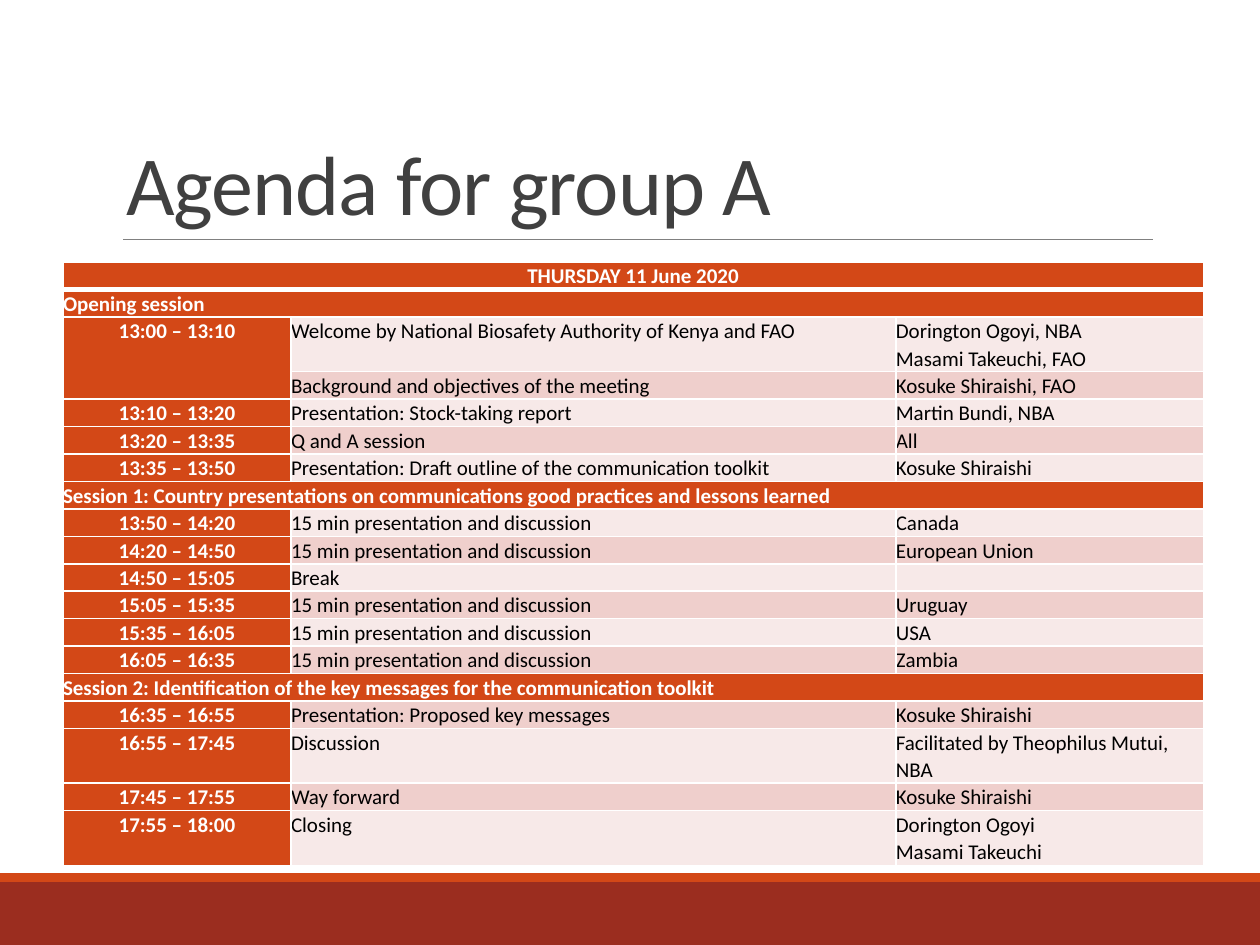
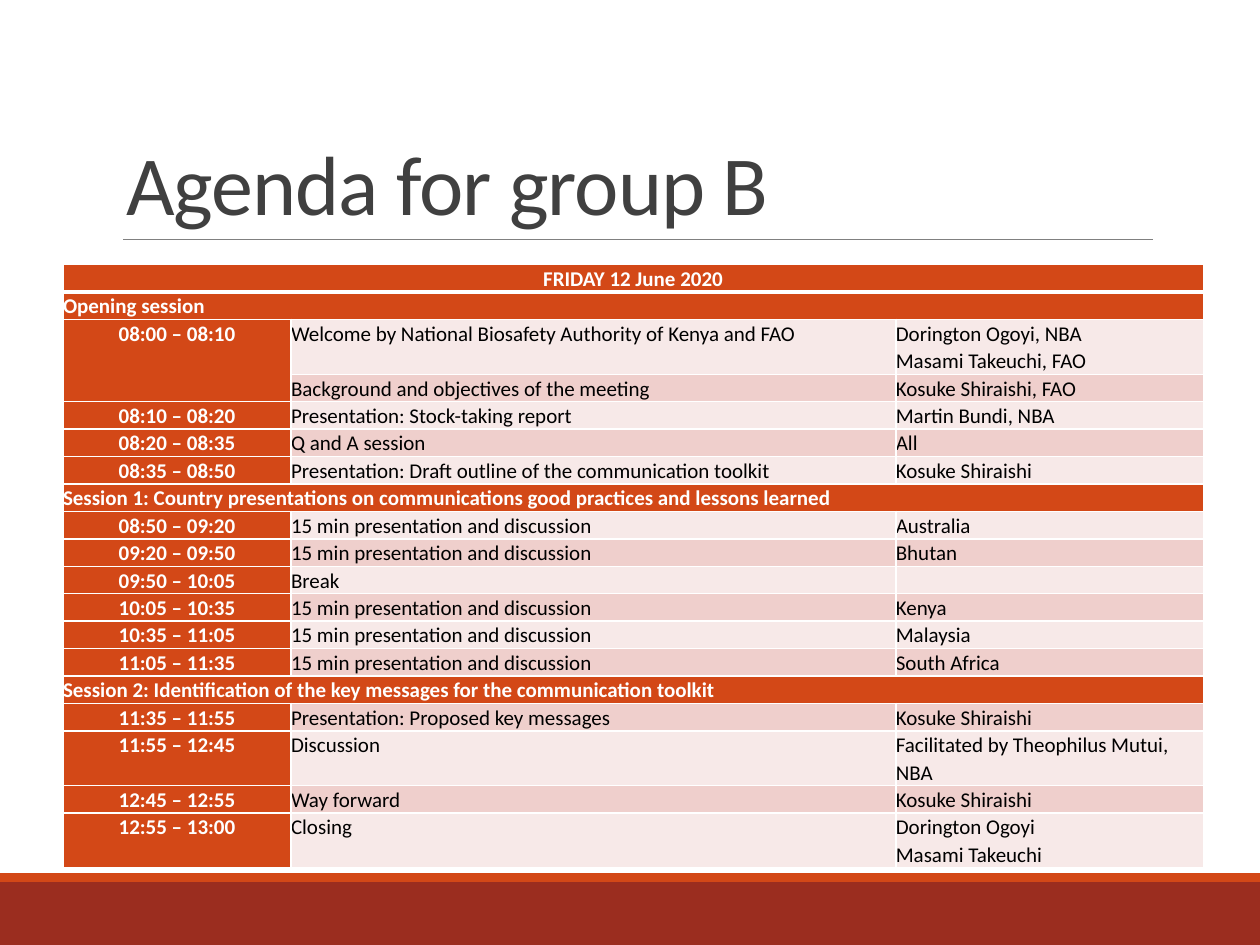
from pptx import Presentation
from pptx.dml.color import RGBColor
from pptx.enum.shapes import MSO_CONNECTOR, MSO_SHAPE
from pptx.enum.text import MSO_ANCHOR, MSO_AUTO_SIZE, PP_ALIGN
from pptx.oxml.ns import qn
from pptx.util import Inches, Pt
from lxml.etree import SubElement

TALK = "15 min presentation and discussion"
GUEST = "guest country"
AGENDA = [
    "Opening session",
    (10, "Welcome by National Biosafety Authority of Kenya and FAO",
     "Dorington Ogoyi, NBA\nMasami Takeuchi, FAO"),
    (0, "Background and objectives of the meeting", "Kosuke Shiraishi, FAO"),
    (10, "Presentation: Stock-taking report", "Martin Bundi, NBA"),
    (15, "Q and A session", "All"),
    (15, "Presentation: Draft outline of the communication toolkit", "Kosuke Shiraishi"),
    "Session 1: Country presentations on communications good practices and lessons learned",
    (30, TALK, GUEST),
    (30, TALK, GUEST),
    (15, "Break", ""),
    (30, TALK, GUEST),
    (30, TALK, GUEST),
    (30, TALK, GUEST),
    "Session 2: Identification of the key messages for the communication toolkit",
    (20, "Presentation: Proposed key messages", "Kosuke Shiraishi"),
    (50, "Discussion", "Facilitated by Theophilus Mutui, NBA"),
    (10, "Way forward", "Kosuke Shiraishi"),
    (5, "Closing", "Dorington Ogoyi\nMasami Takeuchi"),
]
GROUPS = [
    {"title": "Agenda for group A", "day": "THURSDAY 11 June 2020", "start": 13 * 60, "top": 2.08,
     "guests": ["Canada", "European Union", "Uruguay", "USA", "Zambia"]},
    {"title": "Agenda for group B", "day": "FRIDAY 12 June 2020", "start": 8 * 60, "top": 2.1,
     "guests": ["Australia", "Bhutan", "Kenya", "Malaysia", "South Africa"]},
]

FONT = "Calibri"
WHITE = RGBColor(0xFF, 0xFF, 0xFF)
BLACK = RGBColor(0, 0, 0)
ORANGE = RGBColor(0xD3, 0x48, 0x17)
BRICK = RGBColor(0x9B, 0x2D, 0x1F)
GREY = RGBColor(0x80, 0x80, 0x80)
CHARCOAL = RGBColor(0x40, 0x40, 0x40)
BANDS = [RGBColor(0xF7, 0xE9, 0xE8), RGBColor(0xEF, 0xCF, 0xCC)]

FOOTER_BANDS = [(7, 0.5, BRICK), (6.93, 0.07, ORANGE)]
COLUMN_WIDTHS = [1.81, 4.8, 2.44]
TABLE_LEFT, LINE_HEIGHT, TWO_LINE_HEIGHT = 0.5, 0.18, 0.43
TITLE_FONT = {"name": FONT, "size": Pt(48), "bold": False}
HEADING_FONT = {"name": FONT, "size": Pt(12), "bold": True}
BODY_FONT = {**HEADING_FONT, "bold": False}
CELL_MARGINS = dict.fromkeys(["margin_left", "margin_right", "margin_top", "margin_bottom"], 0)


def apply_format(target, values):
    """Set each attribute named in values."""
    for name, value in values.items():
        setattr(target, name, value)


def clock(minutes):
    """Write minutes after midnight as hh:mm."""
    return f"{minutes // 60:02}:{minutes % 60:02}"


def agenda_rows(group):
    """Fill the common agenda with the group's day, times and countries."""
    rows = [(group["day"], "", "")]
    guests, now = iter(group["guests"]), group["start"]
    for entry in AGENDA:
        if isinstance(entry, str):
            rows.append((entry, "", ""))
            continue
        minutes, topic, speaker = entry
        time = f"{clock(now)} – {clock(now + minutes)}" if minutes else ""
        rows.append((time, topic, next(guests) if speaker == GUEST else speaker))
        now += minutes
    return rows


def decorate_layout(slide, layout):
    """Draw the footer bands and title rule, and move them to the layout."""
    decorations = []
    for top, height, color in FOOTER_BANDS:
        band = slide.shapes.add_shape(
            MSO_SHAPE.RECTANGLE, 0, Inches(top), Inches(10), Inches(height))
        band.shadow.inherit = False
        band.fill.solid()
        band.fill.fore_color.rgb = color
        band.line.fill.background()
        decorations.append(band)
    rule = slide.shapes.add_connector(
        MSO_CONNECTOR.STRAIGHT, Inches(0.98), Inches(1.9), Inches(9.15), Inches(1.9))
    rule.line.color.rgb = GREY
    rule.line.width = Pt(0.5)
    SubElement(rule._element.spPr, qn("a:effectLst"))
    decorations.append(rule)
    for number, shape in enumerate(decorations, 20):
        shape._element.xpath(".//p:cNvPr")[0].set("id", str(number))
        layout.shapes._spTree.append(shape._element)


def write_title(slide, text):
    """Place and format the slide title."""
    title = slide.shapes.title
    apply_format(title, {"left": Inches(0.9), "top": Inches(0.31),
                         "width": Inches(8.25), "height": Inches(1.59)})
    frame = title.text_frame
    frame.text = text
    apply_format(frame, {"vertical_anchor": MSO_ANCHOR.BOTTOM,
                         "auto_size": MSO_AUTO_SIZE.NONE, "word_wrap": True})
    paragraph = frame.paragraphs[0]
    apply_format(paragraph, {"alignment": PP_ALIGN.LEFT, "line_spacing": 0.85})
    font = paragraph.runs[0].font
    apply_format(font, TITLE_FONT)
    font.color.rgb = CHARCOAL
    font._element.set("spc", "-50")


def add_border(cell, side, points):
    """Give one side of a cell a white line."""
    line = SubElement(cell._tc.get_or_add_tcPr(), qn(f"a:ln{side}"), w=str(Pt(points)))
    fill = SubElement(line, qn("a:solidFill"))
    SubElement(fill, qn("a:srgbClr"), val=str(WHITE))


def write_cell(cell, text, heading, centred, color, thick_side):
    """Write one table cell with its borders, fill and font."""
    apply_format(cell, CELL_MARGINS)
    for side in "LRTB":
        add_border(cell, side, 3 if side == thick_side else 1)
    cell.fill.solid()
    cell.fill.fore_color.rgb = color
    cell.text = text
    for paragraph in cell.text_frame.paragraphs:
        paragraph.line_spacing = 1.07
        paragraph.alignment = PP_ALIGN.CENTER if centred else PP_ALIGN.LEFT
        if not text:
            paragraph._p.get_or_add_endParaRPr().set("sz", "1200")
        for run in paragraph.runs:
            apply_format(run.font, HEADING_FONT if heading else BODY_FONT)
            run.font.color.rgb = WHITE if heading else BLACK


def add_agenda(slide, group):
    """Add the agenda table of one group."""
    rows = agenda_rows(group)
    heights = [TWO_LINE_HEIGHT if "\n" in speaker or topic == "Discussion" else LINE_HEIGHT
               for _, topic, speaker in rows]
    table = slide.shapes.add_table(
        len(rows), len(COLUMN_WIDTHS), Inches(TABLE_LEFT), Inches(group["top"]),
        Inches(sum(COLUMN_WIDTHS)), Inches(sum(heights))).table
    apply_format(table, {"first_row": False, "horz_banding": False})
    for column, width in zip(table.columns, COLUMN_WIDTHS):
        column.width = Inches(width)
    for index, (texts, height) in enumerate(zip(rows, heights)):
        table.rows[index].height = Inches(height)
        section = not texts[1]
        thick_side = {0: "B", 1: "T"}.get(index)
        for position, text in enumerate(texts):
            heading = section or position == 0
            centred = position == 0 and (index == 0 or not section)
            color = ORANGE if heading else BANDS[index % 2]
            write_cell(table.cell(index, position), text, heading, centred, color, thick_side)
        if section:
            table.cell(index, 0).merge(table.cell(index, 2))
        elif not texts[0]:
            table.cell(index - 1, 0).merge(table.cell(index, 0))


def main():
    """Build the agenda slides."""
    presentation = Presentation()
    apply_format(presentation, {"slide_width": Inches(10), "slide_height": Inches(7.5)})
    layout = presentation.slide_layouts[5]
    for number, group in enumerate(GROUPS):
        slide = presentation.slides.add_slide(layout)
        if number == 0:
            decorate_layout(slide, layout)
        write_title(slide, group["title"])
        add_agenda(slide, group)
    presentation.save("out.pptx")


if __name__ == "__main__":
    main()
